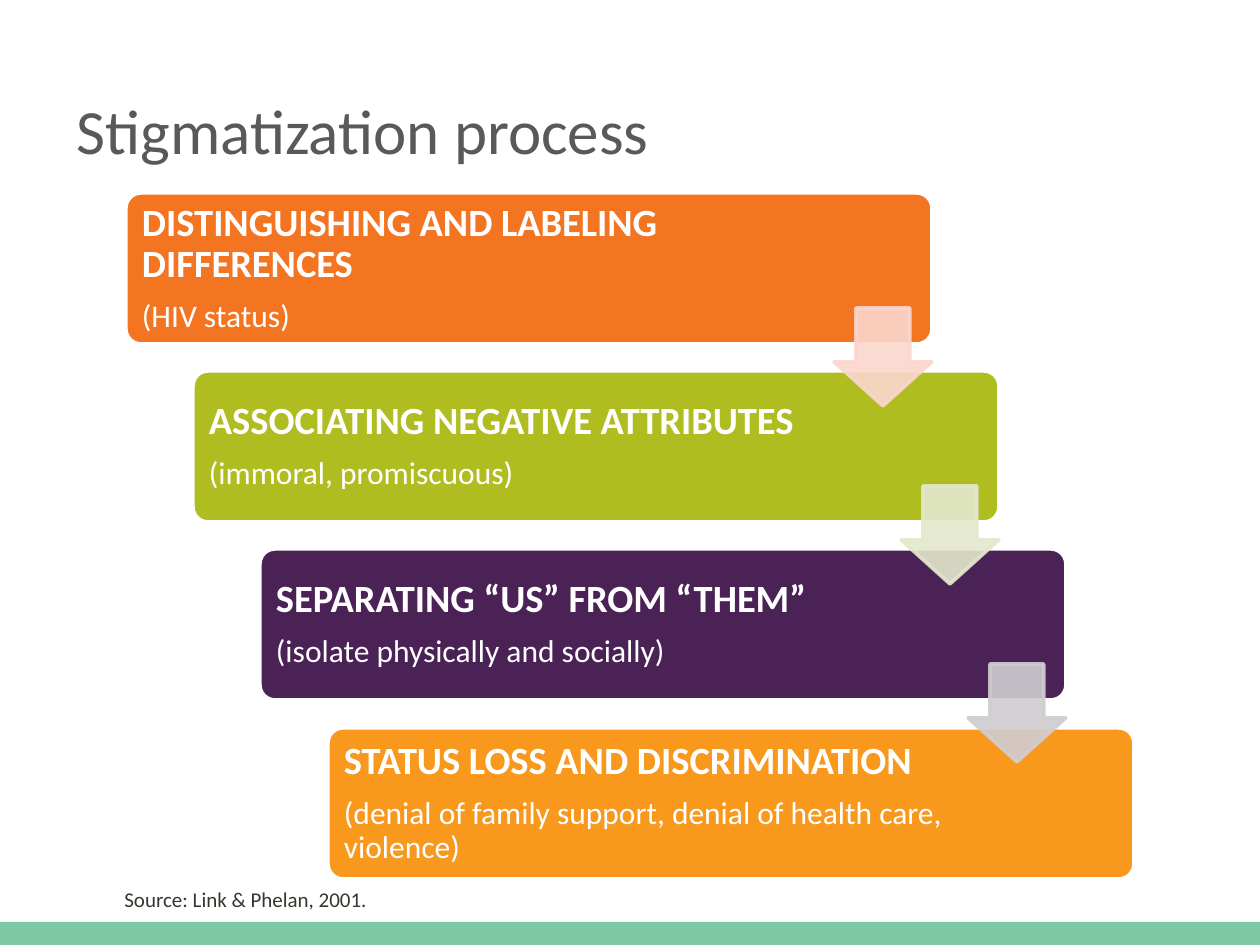
import pptx
import pptx.dml.color
import pptx.enum.shapes
import pptx.enum.text
import pptx.util
from lxml import etree
from pptx.oxml.ns import qn

EMU_PER_PX = 914400 // 126
FONT = "Calibri"
SHAPES = pptx.enum.shapes.MSO_SHAPE
ANCHOR = pptx.enum.text.MSO_ANCHOR

STEPS = [
    ("DISTINGUISHING AND LABELING DIFFERENCES", "(HIV status)", "F37421", "FAD6CD"),
    ("ASSOCIATING NEGATIVE ATTRIBUTES", "(immoral, promiscuous)", "AFBD21", "E3E8CD"),
    ("SEPARATING “US” FROM “THEM”", "(isolate physically and socially)", "4A2256", "D0CDD1"),
    ("STATUS LOSS AND DISCRIMINATION",
     "(denial of family support, denial of health care, violence)", "F8981D", None),
]


def px(length):
    return pptx.util.Emu(length * EMU_PER_PX)


def rgb(color):
    return pptx.dml.color.RGBColor.from_string(color)


def set_opacity(color_format_parent, percent):
    for color in color_format_parent.iter(qn("a:srgbClr")):
        etree.SubElement(color, qn("a:alpha")).set("val", str(percent * 1000))


def add_run(paragraph, text, size, color, bold=False):
    run = paragraph.add_run()
    run.text = text
    run.font.name = FONT
    run.font.size = pptx.util.Pt(size)
    run.font.bold = bold
    run.font.color.rgb = rgb(color)


def add_shape(slide, kind, box, fill, line=None):
    shape = slide.shapes.add_shape(kind, *map(px, box))
    shape.shadow.inherit = False
    shape.fill.solid()
    shape.fill.fore_color.rgb = rgb(fill)
    if line:
        shape.line.color.rgb = rgb(line)
        shape.line.width = pptx.util.Pt(2)
    else:
        shape.line.fill.background()
    return shape


def add_text_box(slide, box):
    frame = slide.shapes.add_textbox(*map(px, box)).text_frame
    frame.word_wrap = True
    return frame


def add_title(slide, box, text):
    title = slide.shapes.title
    title.left, title.top, title.width, title.height = map(px, box)
    title.text_frame.vertical_anchor = ANCHOR.MIDDLE
    paragraph = title.text_frame.paragraphs[0]
    paragraph.alignment = pptx.enum.text.PP_ALIGN.LEFT
    add_run(paragraph, text, 36, "595959")


def add_card(slide, box, heading, example, fill):
    left, top, width, height = box
    card = add_shape(slide, SHAPES.ROUNDED_RECTANGLE, box, fill, "FFFFFF")
    card.adjustments[0] = 0.1
    frame = add_text_box(slide, (left + 5, top + 4, 630, height - 8))
    frame.vertical_anchor = ANCHOR.MIDDLE
    frame.margin_left = frame.margin_right = px(11)
    frame.margin_top = frame.margin_bottom = px(11)
    first, second = frame.paragraphs[0], frame.add_paragraph()
    add_run(first, heading, 22, "FFFFFF", bold=True)
    add_run(second, example, 18, "FFFFFF")
    for paragraph in (first, second):
        paragraph.line_spacing = 0.9
        paragraph.space_after = pptx.util.Pt(8)


def add_arrow(slide, box, color):
    arrow = add_shape(slide, SHAPES.DOWN_ARROW, box, color, color)
    arrow.adjustments[0] = 0.55
    arrow.adjustments[1] = 0.45
    set_opacity(arrow._element.spPr, 90)


def add_staircase(slide, box):
    """Cards stepping down to the right, with arrows across the gaps."""
    left, top, width, height = box
    card_width, card_height, arrow_size = 806, 151, 98
    gaps = len(STEPS) - 1
    corners = [(left + (width - card_width) * i // gaps,
                top + (height - card_height) * i // gaps) for i in range(len(STEPS))]
    for (x, y), (heading, example, fill, _) in zip(corners, STEPS):
        add_card(slide, (x, y, card_width, card_height), heading, example, fill)
    for (x, y), (_, _, _, color) in zip(corners[:-1], STEPS):
        add_arrow(slide, (x + card_width - arrow_size, y + 115, arrow_size, arrow_size), color)


def add_source(slide, box, text):
    add_run(add_text_box(slide, box).paragraphs[0], text, 12, "3B352F")


def main():
    presentation = pptx.Presentation()
    presentation.slide_width = pptx.util.Inches(10)
    presentation.slide_height = pptx.util.Inches(7.5)
    slide = presentation.slides.add_slide(presentation.slide_layouts[5])
    add_shape(slide, SHAPES.RECTANGLE, (0, 922, 1266, 26), "7EC9A3")
    add_title(slide, (64, 62, 1133, 134), "Stigmatization process")
    add_staircase(slide, (126, 193, 1008, 686))
    add_source(slide, (112, 880, 667, 38), "Source: Link & Phelan, 2001.")
    presentation.save("out.pptx")


if __name__ == "__main__":
    main()
